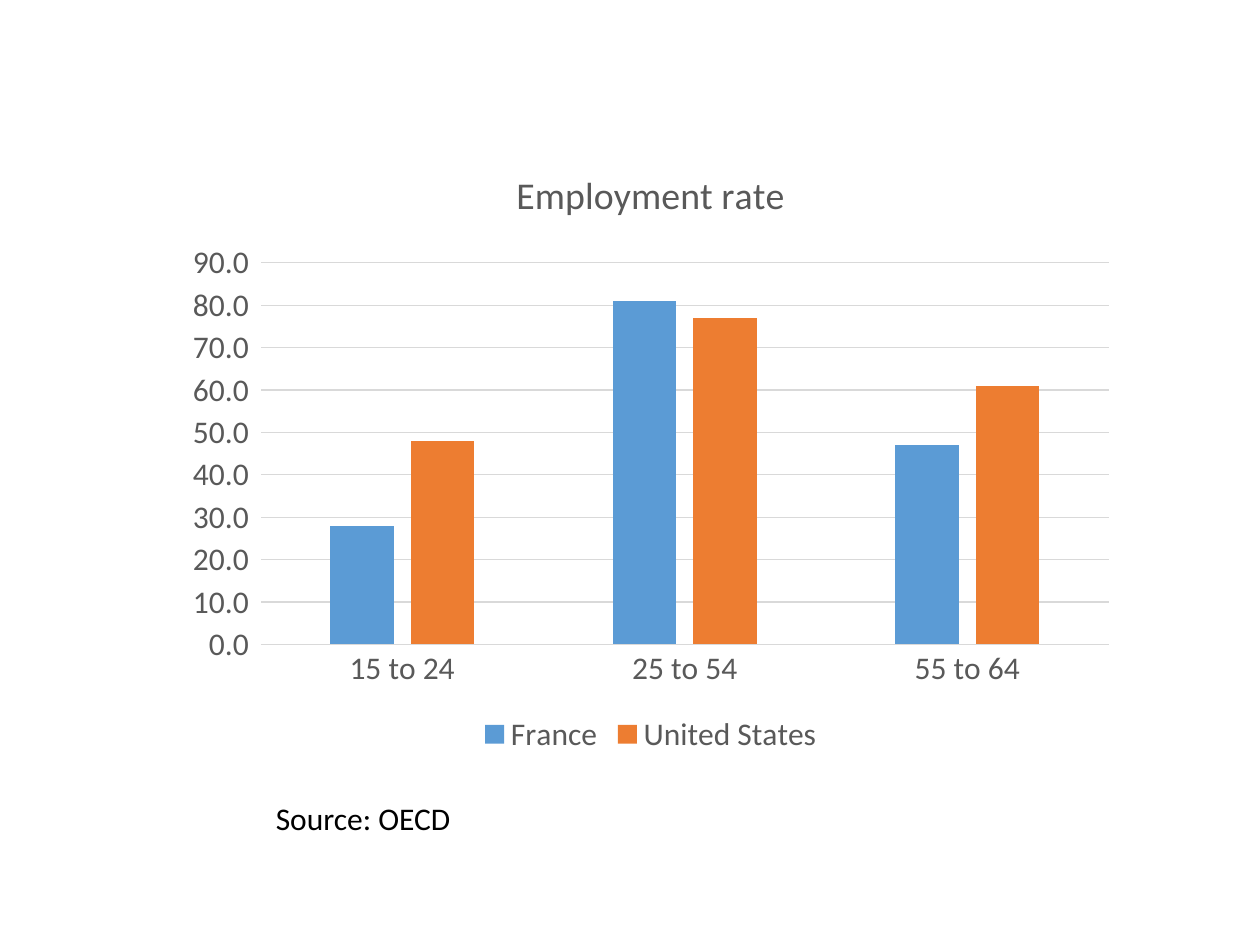
from dataclasses import dataclass

from pptx import Presentation
from pptx.chart.axis import CategoryAxis, ValueAxis
from pptx.chart.chart import Chart
from pptx.chart.data import CategoryChartData
from pptx.dml.color import RGBColor
from pptx.dml.line import LineFormat
from pptx.enum.chart import XL_CHART_TYPE, XL_LEGEND_POSITION, XL_TICK_MARK
from pptx.enum.text import MSO_AUTO_SIZE
from pptx.slide import Slide
from pptx.text.text import Font
from pptx.util import Inches, Pt

CLUSTERED = XL_CHART_TYPE.COLUMN_CLUSTERED
LEGEND_BOTTOM = XL_LEGEND_POSITION.BOTTOM
NO_TICK = XL_TICK_MARK.NONE
FIT_SHAPE = MSO_AUTO_SIZE.SHAPE_TO_FIT_TEXT

SLIDE_WIDTH, SLIDE_HEIGHT = Inches(10), Inches(7.5)
FONT_NAME = "Calibri"
TEXT_SIZE, TITLE_SIZE = 18, 21.6
NUMBER_FORMAT = r"#,##0.0_ ;\-#,##0.0\ "
COLOURS = {
    "black": "000000",
    "label": "595959",
    "grid": "D9D9D9",
    "blue": "5B9BD5",
    "orange": "ED7D31",
}


@dataclass(frozen=True)
class Area:
    """A rectangle given as percentages of the slide's size."""

    left: float
    top: float
    width: float
    height: float

    def lengths(self) -> tuple[int, int, int, int]:
        return (
            int(self.left * SLIDE_WIDTH / 100),
            int(self.top * SLIDE_HEIGHT / 100),
            int(self.width * SLIDE_WIDTH / 100),
            int(self.height * SLIDE_HEIGHT / 100),
        )


@dataclass(frozen=True)
class Country:
    """One series of employment rates with its colour."""

    name: str
    colour: str
    rates: tuple[int, ...]


CHART_AREA = Area(13.8, 15.07, 75.7, 65.33)
SOURCE_AREA = Area(20.9, 83.87, 16.1, 5.33)
AGE_GROUPS = ("15 to 24", "25 to 54", "55 to 64")
COUNTRIES = (
    Country("France", "blue", (28, 81, 47)),
    Country("United States", "orange", (48, 77, 61)),
)


def style_font(font: Font, colour: str, size: float = TEXT_SIZE) -> None:
    font.name = FONT_NAME
    font.size = Pt(size)
    font.bold = False
    font.color.rgb = RGBColor.from_string(COLOURS[colour])


def style_line(line: LineFormat) -> None:
    line.width = Pt(0.75)
    line.color.rgb = RGBColor.from_string(COLOURS["grid"])


def style_axis(axis: CategoryAxis | ValueAxis) -> None:
    axis.major_tick_mark = NO_TICK
    axis.minor_tick_mark = NO_TICK
    style_font(axis.tick_labels.font, "label")


def style_axes(chart: Chart) -> None:
    style_axis(chart.category_axis)
    style_line(chart.category_axis.format.line)
    rates = chart.value_axis
    style_axis(rates)
    rates.minimum_scale, rates.maximum_scale, rates.major_unit = 0, 90, 10
    rates.tick_labels.number_format = NUMBER_FORMAT
    rates.tick_labels.number_format_is_linked = False
    rates.format.line.fill.background()
    style_line(rates.major_gridlines.format.line)


def add_title(chart: Chart, title: str) -> None:
    chart.has_title = True
    chart.chart_title.include_in_layout = False
    run = chart.chart_title.text_frame.paragraphs[0].add_run()
    run.text = title
    style_font(run.font, "label", TITLE_SIZE)


def add_employment_chart(slide: Slide) -> None:
    data = CategoryChartData(number_format=NUMBER_FORMAT)
    data.categories = AGE_GROUPS
    for country in COUNTRIES:
        data.add_series(country.name, country.rates)
    chart = slide.shapes.add_chart(CLUSTERED, *CHART_AREA.lengths(), data).chart
    style_font(chart.font, "black")
    add_title(chart, "Employment rate")
    style_axes(chart)
    chart.has_legend = True
    chart.legend.position = LEGEND_BOTTOM
    chart.legend.include_in_layout = False
    style_font(chart.legend.font, "label")
    plot = chart.plots[0]
    plot.gap_width, plot.overlap, plot.vary_by_categories = 219, -27, False
    for series, country in zip(plot.series, COUNTRIES):
        series.invert_if_negative = False
        series.format.fill.solid()
        series.format.fill.fore_color.rgb = RGBColor.from_string(COLOURS[country.colour])


def add_source(slide: Slide, source: str) -> None:
    frame = slide.shapes.add_textbox(*SOURCE_AREA.lengths()).text_frame
    frame.word_wrap = False
    frame.auto_size = FIT_SHAPE
    run = frame.paragraphs[0].add_run()
    run.text = source
    style_font(run.font, "black")


def main() -> None:
    """Build the employment rate slide and save it."""
    presentation = Presentation()
    presentation.slide_width, presentation.slide_height = SLIDE_WIDTH, SLIDE_HEIGHT
    slide = presentation.slides.add_slide(presentation.slide_layouts[6])
    add_employment_chart(slide)
    add_source(slide, "Source: OECD")
    presentation.save("out.pptx")


if __name__ == "__main__":
    main()
